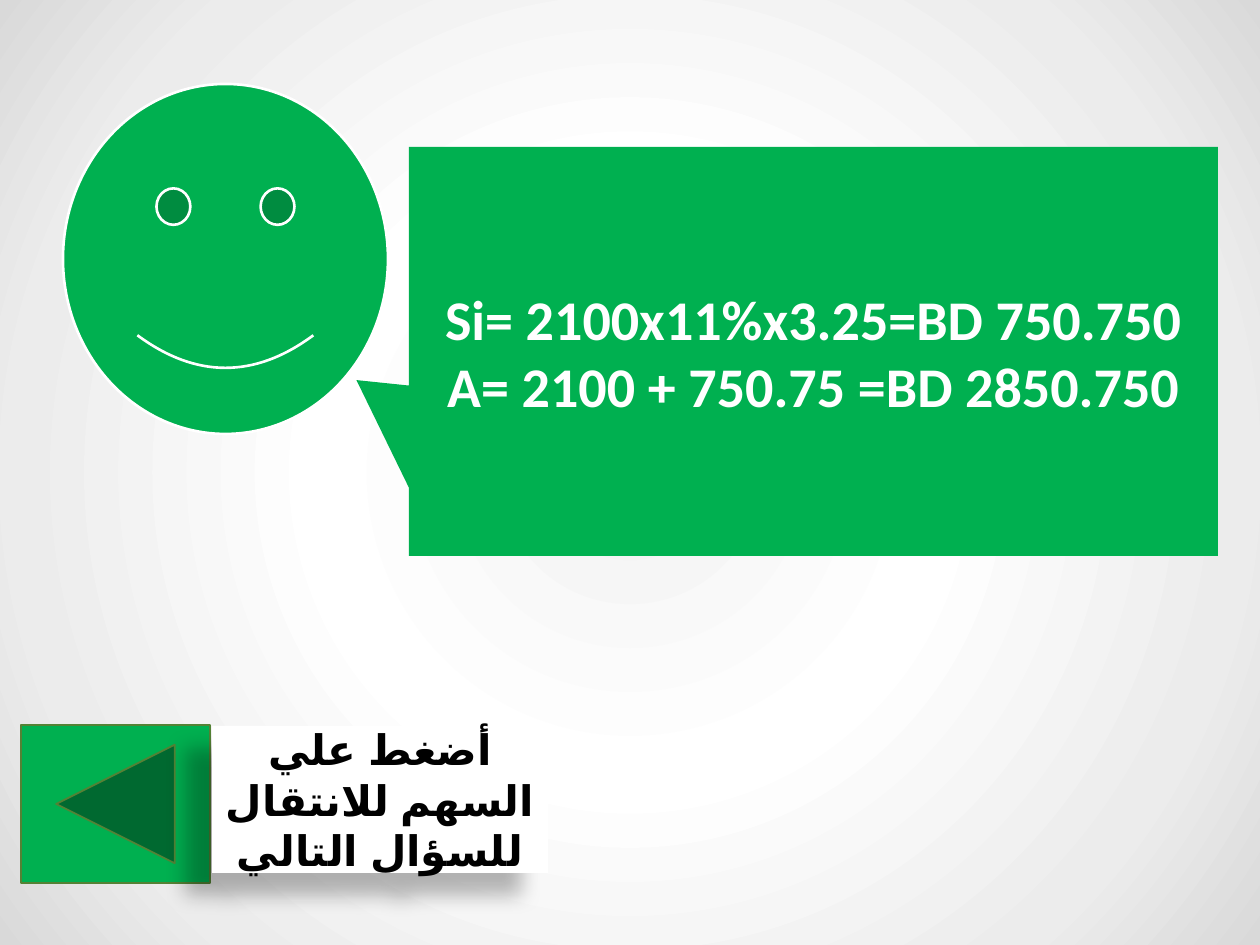
from dataclasses import dataclass
from typing import Optional

from pptx import Presentation
from pptx.dml.color import RGBColor
from pptx.enum.lang import MSO_LANGUAGE_ID
from pptx.enum.shapes import MSO_SHAPE
from pptx.enum.text import MSO_ANCHOR, PP_ALIGN
from pptx.oxml import parse_xml
from pptx.oxml.ns import nsdecls, qn
from pptx.util import Emu, Pt

CALLOUT = MSO_SHAPE.RECTANGULAR_CALLOUT
SMILEY = MSO_SHAPE.SMILEY_FACE
BACK_BUTTON = MSO_SHAPE.ACTION_BUTTON_BACK_OR_PREVIOUS
RECT = MSO_SHAPE.RECTANGLE
CENTER = PP_ALIGN.CENTER
MIDDLE = MSO_ANCHOR.MIDDLE
ARABIC = MSO_LANGUAGE_ID.ARABIC_BAHRAIN

GREEN = RGBColor(0x00, 0xB0, 0x50)
DARK_GREEN = RGBColor(0x54, 0x82, 0x35)
WHITE = RGBColor(0xFF, 0xFF, 0xFF)
BLACK = RGBColor(0x00, 0x00, 0x00)

FONT = "Calibri"
PX_PER_INCH = 126
BACKDROP = ((0, "F2F2F2"), (39, "FFFFFF"), (78, "ECECEC"), (100, "D9D9D9"))


def px(n: int) -> Emu:
    return Emu(round(n * 914400 / PX_PER_INCH))


@dataclass
class Block:
    kind: int
    left: int
    top: int
    width: int
    height: int
    fill: RGBColor
    line: Optional[RGBColor] = None
    line_pt: float = 1
    adjustments: tuple = ()


@dataclass
class Label:
    lines: tuple
    size: int
    color: RGBColor
    hanging: int = 0
    rtl: bool = False


def set_backdrop(slide) -> None:
    stops = "".join(
        f'<a:gs pos="{pos * 1000}"><a:srgbClr val="{color}"/></a:gs>'
        for pos, color in BACKDROP)
    bg = parse_xml(
        f'<p:bg {nsdecls("p", "a")}><p:bgPr><a:gradFill rotWithShape="1">'
        f'<a:gsLst>{stops}</a:gsLst><a:path path="circle">'
        '<a:fillToRect l="50000" t="50000" r="50000" b="50000"/></a:path>'
        '</a:gradFill><a:effectLst/></p:bgPr></p:bg>')
    slide.element.cSld.insert(0, bg)


def draw_block(slide, b: Block):
    sp = slide.shapes.add_shape(
        b.kind, px(b.left), px(b.top), px(b.width), px(b.height))
    for i, value in enumerate(b.adjustments):
        sp.adjustments[i] = value
    sp.shadow.inherit = False
    sp.fill.solid()
    sp.fill.fore_color.rgb = b.fill
    if b.line is None:
        sp.line.fill.background()
    else:
        sp.line.color.rgb = b.line
        sp.line.width = Pt(b.line_pt)
    return sp


def write_label(sp, label: Label) -> None:
    tf = sp.text_frame
    tf.word_wrap = True
    tf.vertical_anchor = MIDDLE
    tf.text = "\n".join(label.lines)
    for p in tf.paragraphs:
        p.alignment = CENTER
        pPr = p._p.get_or_add_pPr()
        if label.hanging:
            pPr.set("marL", str(px(label.hanging)))
            pPr.set("indent", str(-px(label.hanging)))
        if label.rtl:
            pPr.set("rtl", "1")
        for r in p.runs:
            r.font.name = FONT
            r.font.size = Pt(label.size)
            r.font.bold = True
            r.font.color.rgb = label.color
            if label.rtl:
                r.font.language_id = ARABIC


def add_soft_shadow(sp) -> None:
    effects = sp._element.spPr.find(qn("a:effectLst"))
    effects.append(parse_xml(
        f'<a:outerShdw {nsdecls("a")} blurRad="{Pt(11.8)}" dist="{Pt(19.7)}" '
        f'dir="{141 * 60000}" algn="ctr" rotWithShape="0">'
        '<a:srgbClr val="000000"><a:alpha val="28000"/></a:srgbClr>'
        '</a:outerShdw>'))


def main() -> None:
    prs = Presentation()
    prs.slide_width, prs.slide_height = px(1260), px(945)
    slide = prs.slides.add_slide(prs.slide_layouts[6])
    set_backdrop(slide)

    # Answer spoken by the smiley
    answer = draw_block(slide, Block(CALLOUT, 409, 147, 809, 409, GREEN,
                                     adjustments=(-0.565, 0.07)))
    write_label(answer, Label(("Si= 2100x11%x3.25=BD 750.750",
                               "A= 2100 + 750.75 =BD 2850.750"),
                              32, WHITE, hanging=48))
    draw_block(slide, Block(SMILEY, 63, 84, 325, 350, GREEN, WHITE, 1.5))

    # Button and hint leading to the next question
    draw_block(slide, Block(BACK_BUTTON, 21, 725, 189, 158, GREEN, DARK_GREEN))
    hint = draw_block(slide, Block(RECT, 212, 726, 336, 147, WHITE))
    add_soft_shadow(hint)
    write_label(hint, Label(("أضغط علي السهم للانتقال للسؤال التالي",),
                            24, BLACK, rtl=True))

    prs.save("out.pptx")


if __name__ == "__main__":
    main()
